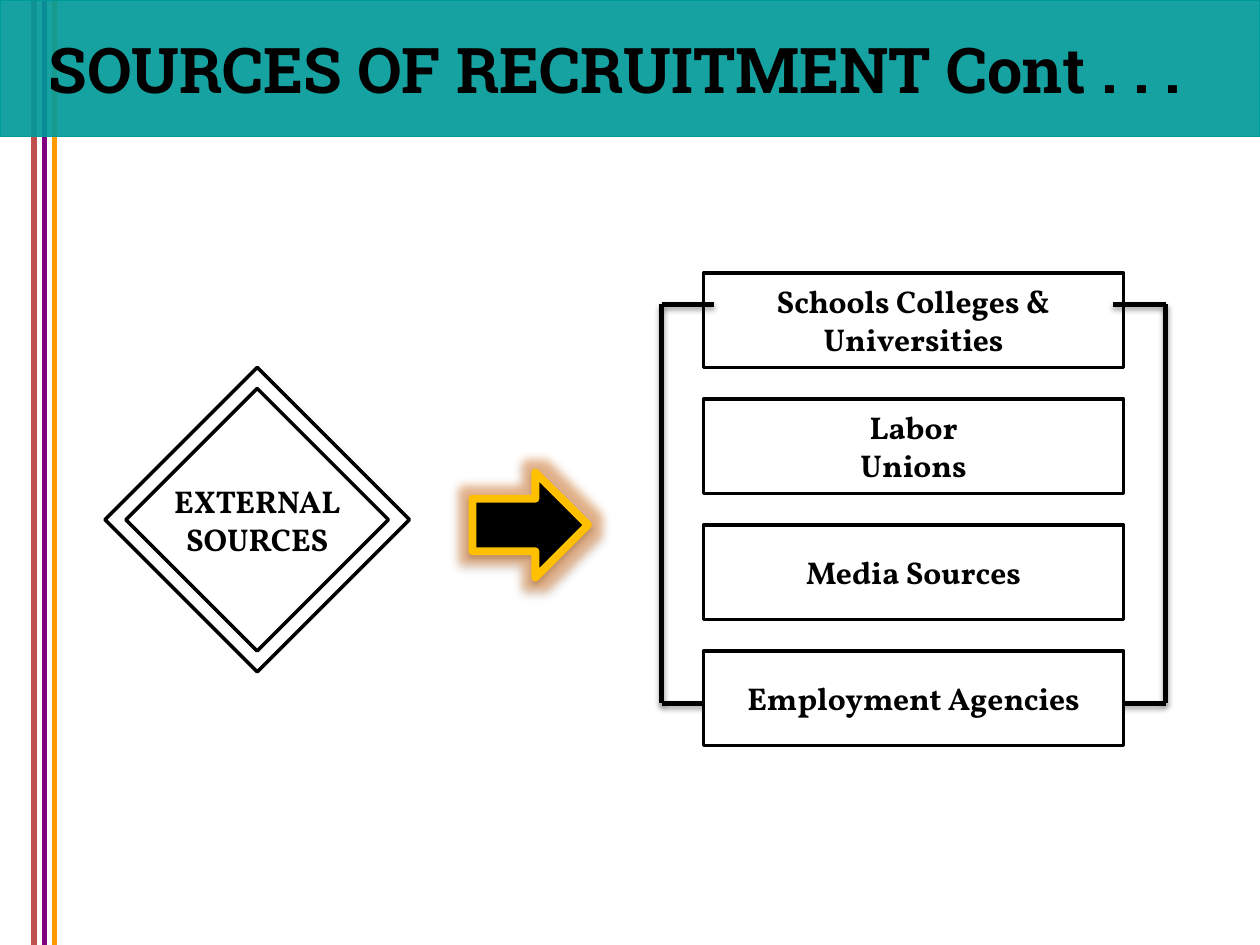
from lxml.etree import SubElement
from pptx import Presentation
from pptx.dml.color import RGBColor
from pptx.enum.shapes import MSO_CONNECTOR as Connector, MSO_SHAPE as Preset
from pptx.enum.text import MSO_ANCHOR as Anchor, PP_ALIGN as Align
from pptx.oxml.ns import qn
from pptx.util import Pt

BLACK = RGBColor(0x00, 0x00, 0x00)
WHITE = RGBColor(0xFF, 0xFF, 0xFF)
TEAL = RGBColor(0x00, 0x99, 0x99)
RED = RGBColor(0xC0, 0x50, 0x4D)
PURPLE = RGBColor(0x80, 0x00, 0x80)
ORANGE = RGBColor(0xFF, 0x99, 0x00)
GOLD = RGBColor(0xFF, 0xC0, 0x00)
GLOW = RGBColor(0xE4, 0x6C, 0x0A)

SOURCES = ["Schools Colleges &\nUniversities", "Labor\nUnions",
           "Media Sources", "Employment Agencies"]


def add_alpha(color_element, percent):
    """Make a colour partly transparent."""
    SubElement(color_element, qn("a:alpha"), val=str(percent * 1000))


def add_effect(effects, name, color, percent, **attributes):
    """Append a coloured effect to an effect list."""
    effect = SubElement(effects, qn(name), **attributes)
    add_alpha(SubElement(effect, qn("a:srgbClr"), val=str(color)), percent)


def add_shadow(effects):
    """Append the soft shadow that falls straight down."""
    add_effect(effects, "a:outerShdw", BLACK, 35, blurRad=str(Pt(3.1)),
               dist=str(Pt(1.8)), dir="5400000", rotWithShape="0")


def add_line(slide, start, end, color=BLACK, shadow=False):
    """Draw a straight 3 pt line."""
    line = slide.shapes.add_connector(
        Connector.STRAIGHT, *(Pt(value) for value in (*start, *end)))
    line.line.color.rgb = color
    line.line.width = Pt(3)
    effects = SubElement(line.element.spPr, qn("a:effectLst"))
    if shadow:
        add_shadow(effects)


def add_box(slide, preset, box, fill=WHITE, line=BLACK, width=2):
    """Add a filled and outlined preset shape."""
    shape = slide.shapes.add_shape(preset, *(Pt(value) for value in box))
    shape.shadow.inherit = False
    shape.fill.solid()
    shape.fill.fore_color.rgb = fill
    shape.line.color.rgb = line
    shape.line.width = Pt(width)
    return shape


def set_text(shape, text, font="Vollkorn", size=18, wrap=True,
             insets=(7.2, 3.6, 7.2, 3.6)):
    """Write centred bold text, one paragraph for each line."""
    frame = shape.text_frame
    frame.text = text
    frame.word_wrap = wrap
    frame.vertical_anchor = Anchor.MIDDLE
    (frame.margin_left, frame.margin_top,
     frame.margin_right, frame.margin_bottom) = map(Pt, insets)
    for paragraph in frame.paragraphs:
        paragraph.alignment = Align.CENTER
        paragraph.font.name = font
        paragraph.font.size = Pt(size)
        paragraph.font.bold = True
        paragraph.font.color.rgb = BLACK


def draw_stripes(slide, left, top, width, height):
    """Draw the three vertical stripes at the slide edge."""
    colors = (RED, PURPLE, ORANGE)
    for index, color in enumerate(colors):
        x = left + index * width / (len(colors) - 1)
        add_line(slide, (x, top), (x, top + height), color)


def draw_title(slide, box):
    """Draw the translucent title band."""
    band = add_box(slide, Preset.RECTANGLE, box, TEAL, TEAL, 0.75)
    add_alpha(band.element.spPr.find(f"{qn('a:solidFill')}/{qn('a:srgbClr')}"), 91)
    set_text(band, "SOURCES OF RECRUITMENT Cont . . .", font="Roboto Slab",
             size=36, wrap=False, insets=(7.2, 3.6, 24, 3.6))


def draw_diamond(slide, left, top, size, inset=12):
    """Draw the double diamond with its label."""
    add_box(slide, Preset.DIAMOND, (left, top, size, size))
    inner = size - 2 * inset
    diamond = add_box(slide, Preset.DIAMOND,
                      (left + inset, top + inset, inner, inner))
    set_text(diamond, "EXTERNAL\nSOURCES", wrap=False, insets=(0, 0, 0, 0))


def draw_arrow(slide, box):
    """Draw the glowing arrow."""
    arrow = add_box(slide, Preset.RIGHT_ARROW, box, BLACK, GOLD, 4.5)
    effects = arrow.element.spPr.find(qn("a:effectLst"))
    add_effect(effects, "a:glow", GLOW, 40, rad=str(Pt(11)))
    add_shadow(effects)


def draw_sources(slide, left, top, width, height, gap=18):
    """Stack the source boxes with equal gaps."""
    box_height = (height - gap * (len(SOURCES) - 1)) / len(SOURCES)
    for index, text in enumerate(SOURCES):
        y = top + index * (box_height + gap)
        box = add_box(slide, Preset.RECTANGLE, (left, y, width, box_height))
        set_text(box, text)


def draw_stubs(slide, left, right, y, length=30):
    """Draw the inward ends of both brackets at one height."""
    for start, end in ((left, left + length), (right - length, right)):
        add_line(slide, (start, y), (end, y), shadow=True)


def draw_bracketed_sources(slide, left, top, width, height):
    """Draw the sources between brackets, lower ends behind the boxes."""
    right, bottom = left + width, top + height
    draw_stubs(slide, left, right, bottom)
    draw_sources(slide, left + 24, top - 18, width - 48, height + 42)
    draw_stubs(slide, left, right, top)
    for x in (left, right):
        add_line(slide, (x, top), (x, bottom), shadow=True)


def main():
    """Build and save the slide."""
    presentation = Presentation()
    presentation.slide_width = Pt(720)
    presentation.slide_height = Pt(540)
    slide = presentation.slides.add_slide(presentation.slide_layouts[6])
    draw_stripes(slide, 19.5, 0, 11.5, 540)
    draw_title(slide, (0, 0, 720, 78))
    draw_diamond(slide, 60, 210, 174)
    draw_arrow(slide, (270, 270, 66, 60))
    draw_bracketed_sources(slide, 378, 174, 288, 228)
    presentation.save("out.pptx")


if __name__ == "__main__":
    main()
